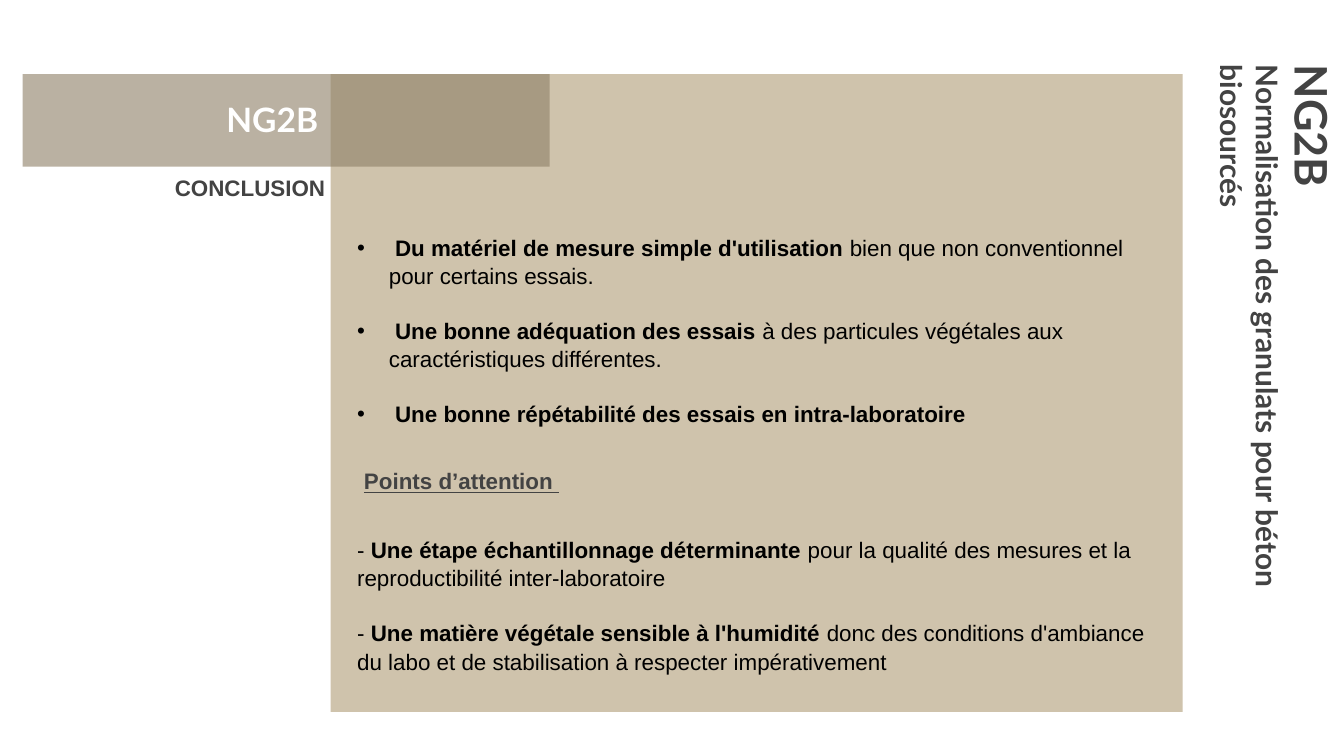
from dataclasses import dataclass

from lxml.etree import SubElement
from pptx import Presentation
from pptx.dml.color import RGBColor
from pptx.enum.shapes import MSO_SHAPE
from pptx.enum.text import MSO_ANCHOR, MSO_AUTO_SIZE, PP_ALIGN
from pptx.oxml.ns import qn
from pptx.util import Cm, Pt


@dataclass(frozen=True)
class Theme:
    sand: str = "CFC3AC"
    taupe: str = "908269"
    white: str = "FFFFFF"
    dark: str = "434343"
    black: str = "000000"
    heading_font: str = "Lato"
    body_font: str = "Arial"
    title: int = 24
    banner: int = 18
    subtitle: int = 16
    body: int = 12


@dataclass(frozen=True)
class Box:
    left: float
    top: float
    width: float
    height: float

    def lengths(self) -> tuple:
        return Cm(self.left), Cm(self.top), Cm(self.width), Cm(self.height)


@dataclass(frozen=True)
class Point:
    lead: str
    strong: str
    rest: str = ""
    bullet: bool = False
    before: float = 14.4


T = Theme()

POINTS = [
    Point(" ", "Du matériel de mesure simple d'utilisation ",
          "bien que non conventionnel pour certains essais.", True, 0),
    Point(" ", "Une bonne adéquation des essais ",
          "à des particules végétales aux caractéristiques différentes.", True),
    Point(" ", "Une bonne répétabilité des essais en intra-laboratoire", bullet=True),
    Point("- ", "Une étape échantillonnage déterminante ",
          "pour la qualité des mesures et la reproductibilité inter-laboratoire",
          before=57.6),
    Point("- ", "Une matière végétale sensible à l'humidité ",
          "donc des conditions d'ambiance du labo et de stabilisation "
          "à respecter impérativement"),
]


def style(font, size: int, color: str, name: str, bold: bool = True) -> None:
    font.size, font.name, font.bold = Pt(size), name, bold
    font.color.rgb = RGBColor.from_string(color)


def add_block(s, box: Box, color: str, opacity: int = 100) -> None:
    sp = s.shapes.add_shape(MSO_SHAPE.RECTANGLE, *box.lengths())
    sp.shadow.inherit = False
    sp.line.fill.background()
    sp.fill.solid()
    sp.fill.fore_color.rgb = RGBColor.from_string(color)
    if opacity < 100:
        clr = sp.fill._xPr.find(qn("a:solidFill"))[0]
        SubElement(clr, qn("a:alpha"), val=str(opacity * 1000))


def set_frame(tf, inset: float, anchor=MSO_ANCHOR.TOP, wrap: bool = True) -> None:
    tf.word_wrap = wrap
    tf.auto_size = MSO_AUTO_SIZE.NONE
    tf.vertical_anchor = anchor
    tf.margin_left = tf.margin_right = Cm(0.25)
    tf.margin_top = tf.margin_bottom = Cm(inset)


def add_label(s, box: Box, text: str, size: int, color: str, name: str,
              align=PP_ALIGN.LEFT, anchor=MSO_ANCHOR.TOP,
              inset: float = 0.25, wrap: bool = True):
    tf = s.shapes.add_textbox(*box.lengths()).text_frame
    set_frame(tf, inset, anchor, wrap)
    p = tf.paragraphs[0]
    p.text = text
    p.alignment = align
    r = p.runs[0]
    style(r.font, size, color, name)
    return r


def set_title(s, box: Box) -> None:
    sp = s.shapes.title
    sp.left, sp.top, sp.width, sp.height = box.lengths()
    sp.rotation = 90
    tf = sp.text_frame
    tf.text = "NG2B\nNormalisation des granulats pour béton biosourcés"
    set_frame(tf, 0.25, MSO_ANCHOR.MIDDLE)
    for p, size in zip(tf.paragraphs, (T.title, T.subtitle)):
        p.alignment = PP_ALIGN.LEFT
        p.space_before = Pt(0)
        style(p.runs[0].font, size, T.dark, T.heading_font)


def add_points(s, box: Box, points: list[Point]) -> None:
    tf = s.shapes.add_textbox(*box.lengths()).text_frame
    set_frame(tf, 0.13)
    for i, point in enumerate(points):
        p = tf.paragraphs[0] if i == 0 else tf.add_paragraph()
        p.line_spacing = 1.05
        p.space_before = Pt(point.before)
        if point.bullet:
            pPr = p._p.get_or_add_pPr()
            pPr.set("marL", str(Cm(0.6)))
            pPr.set("indent", str(-Cm(0.6)))
            SubElement(pPr, qn("a:buFont"), typeface=T.body_font)
            SubElement(pPr, qn("a:buChar"), char="•")
        for text, bold in ((point.lead, False), (point.strong, True), (point.rest, False)):
            if text:
                r = p.add_run()
                r.text = text
                style(r.font, T.body, T.black, T.body_font, bold)


def main() -> None:
    prs = Presentation()
    prs.slide_width, prs.slide_height = Cm(25.4), Cm(14.29)
    s = prs.slides.add_slide(prs.slide_layouts[5])
    set_title(s, Box(17.78, 6.65, 12.7, 1.35))
    add_block(s, Box(6.25, 1.4, 16.1, 12.06), T.sand)
    add_block(s, Box(0.43, 1.4, 9.96, 1.75), T.taupe, 62)
    add_label(s, Box(0.66, 1.63, 8.97, 1.24), "NG2B", T.banner, T.white,
              T.heading_font, PP_ALIGN.CENTER, MSO_ANCHOR.MIDDLE)
    add_label(s, Box(0.48, 3.05, 5.92, 2.29), "CONCLUSION", T.body, T.dark,
              T.body_font, PP_ALIGN.RIGHT)
    add_points(s, Box(6.5, 4.27, 15.77, 8.46), POINTS)
    r = add_label(s, Box(6.63, 8.71, 4.24, 0.76), "Points d’attention ", T.body,
                  T.dark, T.body_font, inset=0.13, wrap=False)
    r.font.underline = True
    prs.save("out.pptx")


if __name__ == "__main__":
    main()
